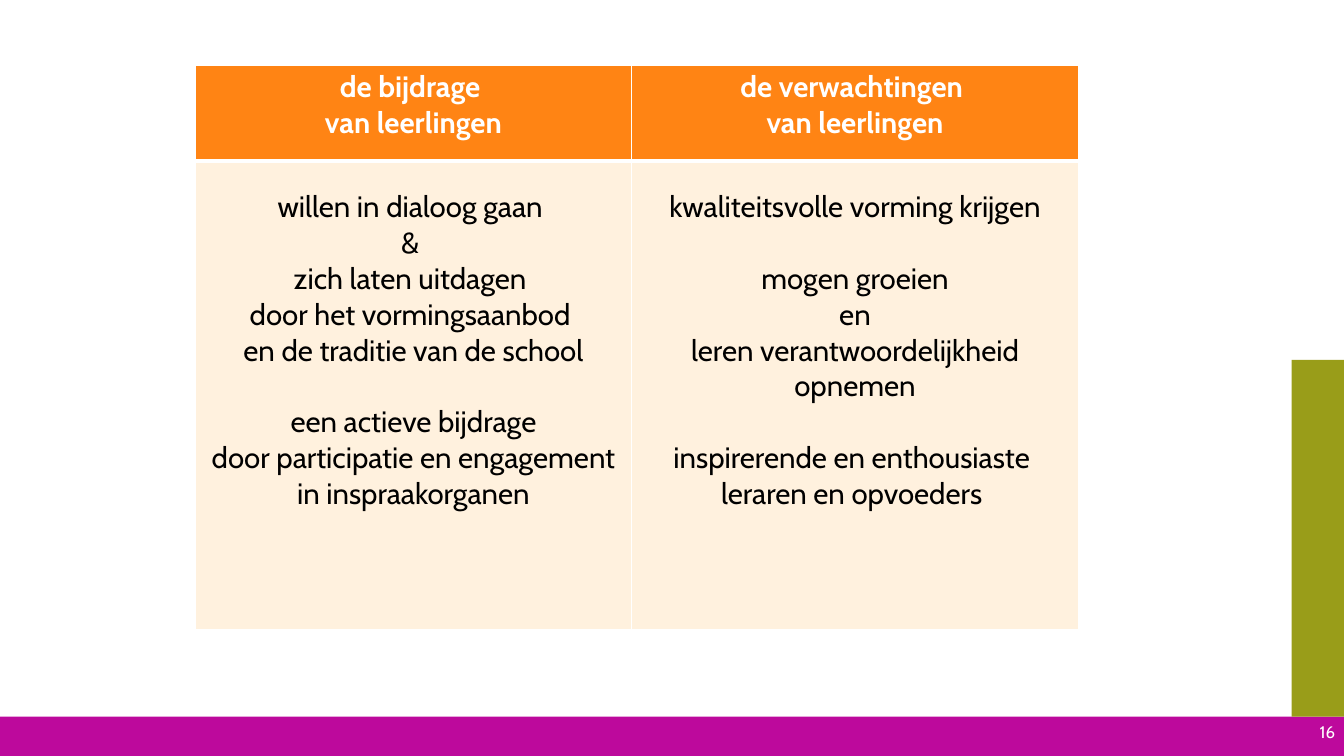
from dataclasses import dataclass

from lxml.etree import SubElement
from pptx import Presentation
from pptx.dml.color import RGBColor
from pptx.enum.shapes import MSO_SHAPE
from pptx.enum.text import MSO_ANCHOR, PP_ALIGN
from pptx.oxml.ns import qn
from pptx.util import Inches, Pt

FONT = "Cabin"
WHITE = RGBColor(0xFF, 0xFF, 0xFF)
BLACK = RGBColor(0x00, 0x00, 0x00)
MAGENTA = RGBColor(0xBD, 0x09, 0x9C)
OLIVE = RGBColor(0x99, 0x9D, 0x19)
ORANGE = RGBColor(0xFF, 0x84, 0x14)
CREAM = RGBColor(0xFF, 0xF1, 0xDE)
GROUP_GAP = Pt(25.6)


@dataclass(frozen=True)
class Band:
    left: float
    top: float
    width: float
    height: float
    color: RGBColor


@dataclass(frozen=True)
class RowStyle:
    height: float
    top_margin: float
    fill: RGBColor
    text: RGBColor
    bold: bool
    bottom_border: int


@dataclass(frozen=True)
class Column:
    width: float
    heading: list[str]
    groups: list[list[str]]


BANDS = [
    Band(0, 7.11, 13.33, 0.39, MAGENTA),
    Band(12.81, 3.57, 0.52, 3.54, OLIVE),
]
HEADING_ROW = RowStyle(0.95, 0.04, ORANGE, WHITE, True, 3)
BODY_ROW = RowStyle(4.65, 0.28, CREAM, BLACK, False, 1)
COLUMNS = [
    Column(4.32, ["de bijdrage ", "van leerlingen"], [
        ["willen in dialoog gaan ", "& ", "zich laten uitdagen ",
         "door het vormingsaanbod ", "en de traditie van de school"],
        ["een actieve bijdrage", "door participatie en engagement",
         "in inspraakorganen"],
    ]),
    Column(4.44, ["de verwachtingen ", "van leerlingen"], [
        ["kwaliteitsvolle vorming krijgen"],
        ["mogen groeien", "en", "leren verantwoordelijkheid opnemen"],
        ["inspirerende en enthousiaste ", "leraren en opvoeders "],
    ]),
]


def draw_band(slide, band: Band) -> None:
    bar = slide.shapes.add_shape(
        MSO_SHAPE.RECTANGLE, Inches(band.left), Inches(band.top),
        Inches(band.width), Inches(band.height))
    bar.shadow.inherit = False
    bar.fill.solid()
    bar.fill.fore_color.rgb = band.color
    bar.line.fill.background()


def add_borders(cell, bottom: int) -> None:
    properties = cell._tc.get_or_add_tcPr()
    for side, points in (("L", 1), ("R", 1), ("T", 1), ("B", bottom)):
        border = SubElement(properties, qn(f"a:ln{side}"), w=str(Pt(points)))
        color = SubElement(border, qn("a:solidFill"))
        SubElement(color, qn("a:srgbClr"), val=str(WHITE))


def set_font(paragraph, size: int, color: RGBColor, bold: bool = False) -> None:
    paragraph.font.name = FONT
    paragraph.font.size = Pt(size)
    paragraph.font.bold = bold
    paragraph.font.color.rgb = color


def fill_cell(cell, groups: list[list[str]], style: RowStyle) -> None:
    add_borders(cell, style.bottom_border)
    cell.fill.solid()
    cell.fill.fore_color.rgb = style.fill
    cell.margin_left = cell.margin_right = Inches(0.07)
    cell.margin_top = Inches(style.top_margin)
    cell.margin_bottom = Inches(0.04)
    cell.text = "\n".join(line for group in groups for line in group)
    group_starts = [sum(map(len, groups[:i])) for i in range(1, len(groups))]
    for index, paragraph in enumerate(cell.text_frame.paragraphs):
        paragraph.alignment = PP_ALIGN.CENTER
        if index in group_starts:
            paragraph.space_before = GROUP_GAP
        set_font(paragraph, 21, style.text, style.bold)


def draw_table(slide) -> None:
    rows = [HEADING_ROW, BODY_ROW]
    table = slide.shapes.add_table(
        len(rows), len(COLUMNS), Inches(1.94), Inches(0.65),
        Inches(sum(column.width for column in COLUMNS)),
        Inches(sum(row.height for row in rows))).table
    for index, row in enumerate(rows):
        table.rows[index].height = Inches(row.height)
    for index, column in enumerate(COLUMNS):
        table.columns[index].width = Inches(column.width)
        fill_cell(table.cell(0, index), [column.heading], HEADING_ROW)
        fill_cell(table.cell(1, index), column.groups, BODY_ROW)


def draw_page_number(slide) -> None:
    frame = slide.shapes.add_textbox(
        Inches(10.33), Inches(7.03), Inches(3.01), Inches(0.47)).text_frame
    frame.word_wrap = True
    frame.vertical_anchor = MSO_ANCHOR.MIDDLE
    page_number = frame.paragraphs[0]
    page_number.text = "16"
    page_number.alignment = PP_ALIGN.RIGHT
    set_font(page_number, 12, WHITE)


def main() -> None:
    presentation = Presentation()
    presentation.slide_width = Inches(13.33)
    presentation.slide_height = Inches(7.5)
    slide = presentation.slides.add_slide(presentation.slide_layouts[6])

    # Coloured bands at the bottom and right edge
    for band in BANDS:
        draw_band(slide, band)
    draw_page_number(slide)

    # Contributions and expectations of pupils
    draw_table(slide)
    presentation.save("out.pptx")


if __name__ == "__main__":
    main()
